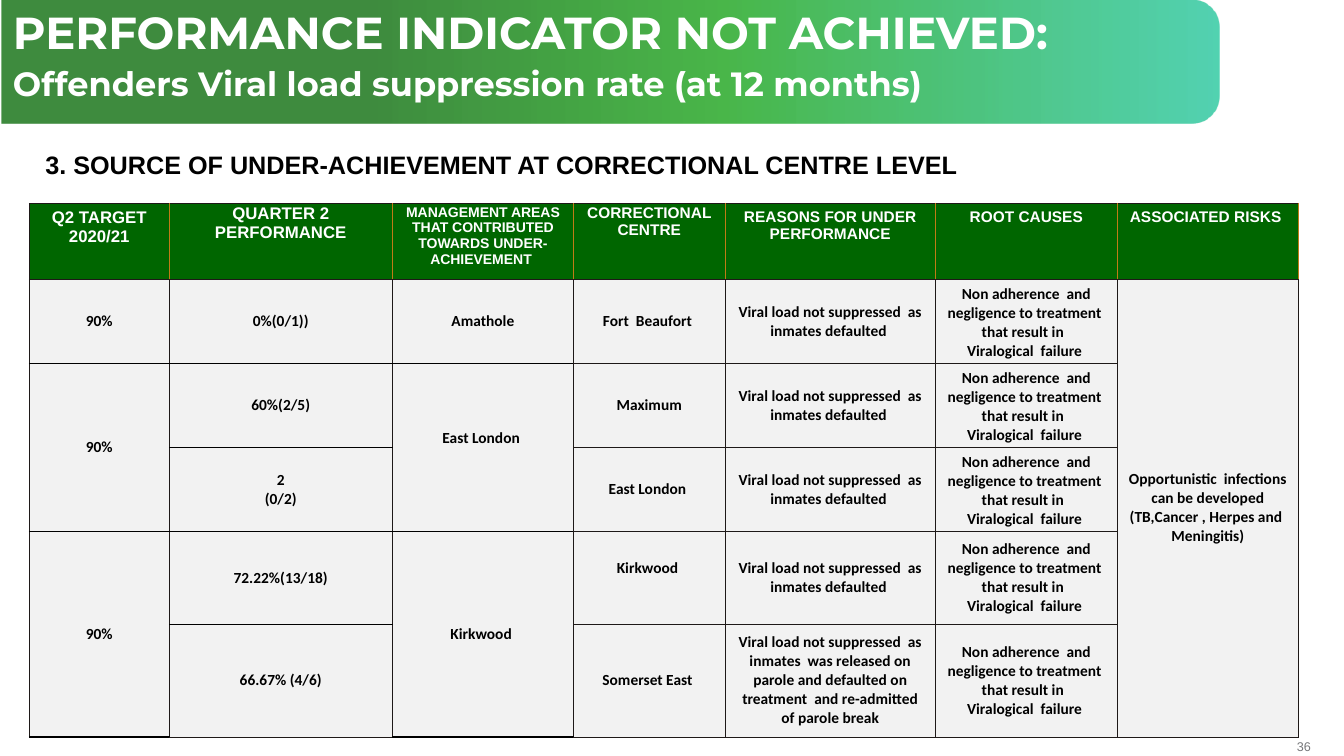
from dataclasses import dataclass

from lxml import etree
from pptx import Presentation
from pptx.dml.color import RGBColor
from pptx.enum.shapes import MSO_SHAPE
from pptx.enum.text import MSO_ANCHOR, PP_ALIGN
from pptx.oxml import parse_xml
from pptx.util import Pt

PX = 9144  # 100 px to the inch
NS = "http://schemas.openxmlformats.org/drawingml/2006/main"
LEFT, MID, RIGHT = PP_ALIGN.LEFT, PP_ALIGN.CENTER, PP_ALIGN.RIGHT
TOP, CENTER = MSO_ANCHOR.TOP, MSO_ANCHOR.MIDDLE
ROUND = MSO_SHAPE.ROUND_2_SAME_RECTANGLE


@dataclass(frozen=True)
class Theme:
    head: str = "006600"
    body: str = "F2F2F2"
    white: str = "FFFFFF"
    black: str = "000000"
    gray: str = "77787B"
    line: str = "1E1918"
    gold: str = "BF7B17"
    # Stop, colour and opacity in percent
    fade: tuple = ((30, "006600", 75), (59, "009900", 71), (100, "00BC8D", 67))
    title: int = 32
    sub: int = 24
    lead: int = 18
    cell: int = 11
    note: int = 9
    show: str = "Montserrat"
    sans: str = "Arial"
    text: str = "Calibri"


T = Theme()

WIDTHS = [139, 221, 180, 150, 209, 180, 180]
HEIGHTS = [75, 83, 83, 83, 92, 112]

# Header text, size, narrow margins
HEADS = [
    ("Q2 TARGET 2020/21", 12, False),
    ("QUARTER 2\nPERFORMANCE", 12, True),
    ("MANAGEMENT AREAS THAT CONTRIBUTED TOWARDS UNDER-ACHIEVEMENT ", 10, True),
    ("CORRECTIONAL CENTRE", 11, True),
    (("REASONS FOR UNDER", "PERFORMANCE"), 11, False),
    ("ROOT CAUSES", 11, False),
    ("ASSOCIATED RISKS ", 11, False),
]

WHY = "Viral load not suppressed  as inmates defaulted "
FREED = ("Viral load not suppressed  as inmates  was released on parole and "
         "defaulted on treatment  and re-admitted of parole break")
ROOT = ("Non adherence  and negligence to treatment  that result in  ",
        "Viralogical  failure ")
RISK = ("Opportunistic  infections can be developed "
        "(TB,Cancer , Herpes and  Meningitis)")

# None continues the cell above
ROWS = [
    ("90%", "0%(0/1))", "Amathole", "Fort  Beaufort ", WHY, ROOT, RISK),
    ("90%", "60%(2/5)", "East London ", "Maximum", WHY, ROOT, None),
    (None, ("2", "(0/2)"), None, "East London ", WHY, ROOT, None),
    ("90%", "72.22%(13/18)", "Kirkwood ", "Kirkwood ", WHY, ROOT, None),
    (None, "66.67% (4/6)", None, "Somerset East ", FREED, ROOT, None),
]
LIFTS = {(2, 2): 24, (4, 3): 24}  # deeper bottom margins


def write(frame, text, size=T.cell, font=T.text, color=T.black, bold=True,
          align=LEFT, anchor=TOP, pad=(10, 5, 10, 5), gap=None, lead=None):
    """Fill a text frame or a cell; a tuple gives one paragraph per item."""
    parts = (text,) if isinstance(text, str) else text
    sizes = size if isinstance(size, tuple) else (size,) * len(parts)
    frame.vertical_anchor = anchor
    (frame.margin_left, frame.margin_top,
     frame.margin_right, frame.margin_bottom) = [n * PX for n in pad]
    body = getattr(frame, "text_frame", frame)
    body.word_wrap = True
    for i, (part, points) in enumerate(zip(parts, sizes)):
        para = body.add_paragraph() if i else body.paragraphs[0]
        para.text = part
        para.alignment = align
        if gap is not None:
            para.space_after = Pt(gap)
        if lead is not None:
            para.line_spacing = lead
        for run in para.runs:
            run.font.size = Pt(points)
            run.font.name = font
            run.font.bold = bold
            run.font.color.rgb = RGBColor.from_string(color)


def label(slide, box, text, **style):
    shape = slide.shapes.add_textbox(*[n * PX for n in box])
    write(shape.text_frame, text, **style)


def banner(slide):
    """Draw the upright shape that is turned to lie along the top edge."""
    box = (544, -543, 123, 1208)
    shape = slide.shapes.add_shape(ROUND, *[n * PX for n in box])
    shape.rotation = 90
    shape.adjustments[0], shape.adjustments[1] = 0.23, 0
    shape.shadow.inherit = False
    shape.line.fill.background()
    stops = "".join(
        f'<a:gs pos="{pos * 1000}"><a:srgbClr val="{color}">'
        f'<a:alpha val="{alpha * 1000}"/></a:srgbClr></a:gs>'
        for pos, color, alpha in T.fade)
    fill = parse_xml(
        f'<a:gradFill xmlns:a="{NS}" rotWithShape="1"><a:gsLst>{stops}</a:gsLst>'
        '<a:lin ang="16200000" scaled="0"/></a:gradFill>')
    shape.element.spPr.find(f"{{{NS}}}prstGeom").addnext(fill)


def paint(cell, color, edges):
    """Set the fill and the left, right, top and bottom edges."""
    cell.fill.solid()
    cell.fill.fore_color.rgb = RGBColor.from_string(color)
    props = cell._tc.get_or_add_tcPr()
    for i, (side, (tint, width)) in enumerate(zip("LRTB", edges)):
        line = etree.Element(f"{{{NS}}}ln{side}", w=str(int(Pt(width))))
        solid = etree.SubElement(line, f"{{{NS}}}solidFill")
        etree.SubElement(solid, f"{{{NS}}}srgbClr", val=tint)
        props.insert(i, line)


def grid(slide):
    box = (29, 202, sum(WIDTHS), sum(HEIGHTS))
    table = slide.shapes.add_table(
        len(HEIGHTS), len(WIDTHS), *[n * PX for n in box]).table
    table.first_row = table.horz_banding = False
    for col, width in zip(table.columns, WIDTHS):
        col.width = width * PX
    for row, height in zip(table.rows, HEIGHTS):
        row.height = height * PX
    thin, gold, bold = (T.line, 0.5), (T.gold, 0.5), (T.black, 1)

    # Header row
    for c, (text, size, tight) in enumerate(HEADS):
        cell = table.cell(0, c)
        paint(cell, T.head, (gold if c else thin, gold, thin, thin))
        write(cell, text, size=size, font=T.sans, color=T.white, align=MID,
              pad=(1, 1, 1, 0) if tight else (10, 5, 10, 5))

    # Body rows
    last = len(ROWS)
    for r, row in enumerate(ROWS, 1):
        for c, text in enumerate(row):
            cell = table.cell(r, c)
            over = bold if c < 3 and r > 1 else thin
            under = bold if c < 3 and r < last else thin
            paint(cell, T.body, (thin, thin, over, under))
            if text is not None:
                write(cell, text, align=MID, anchor=CENTER,
                      pad=(10, 5, 10, LIFTS.get((r, c), 5)))

    # Cells that span rows
    for c in range(len(WIDTHS)):
        start = 1
        for r in range(2, last + 2):
            if r > last or ROWS[r - 1][c] is not None:
                if r - start > 1:
                    table.cell(start, c).merge(table.cell(r - 1, c))
                start = r


def main():
    deck = Presentation()
    deck.slide_width, deck.slide_height = 1333 * PX, 750 * PX
    slide = deck.slides.add_slide(deck.slide_layouts[6])

    # Page number and banner
    label(slide, (1261, 733, 39, 15), "36", size=T.note, font=T.sans,
          color=T.gray, bold=False, align=RIGHT, anchor=CENTER,
          pad=(0, 0, 0, 0))
    banner(slide)

    # Section heading and table
    label(slide, (0, 143, 1000, 40),
          "3. SOURCE OF UNDER-ACHIEVEMENT AT CORRECTIONAL CENTRE LEVEL",
          size=T.lead, font=T.sans, pad=(45, 5, 10, 5))
    grid(slide)

    # Title
    label(slide, (3, 6, 1198, 57),
          ("PERFORMANCE INDICATOR NOT ACHIEVED:",
           "Offenders Viral load suppression rate (at 12 months)"),
          size=(T.title, T.sub), font=T.show, color=T.white, gap=6, lead=0.9)
    deck.save("out.pptx")


if __name__ == "__main__":
    main()
